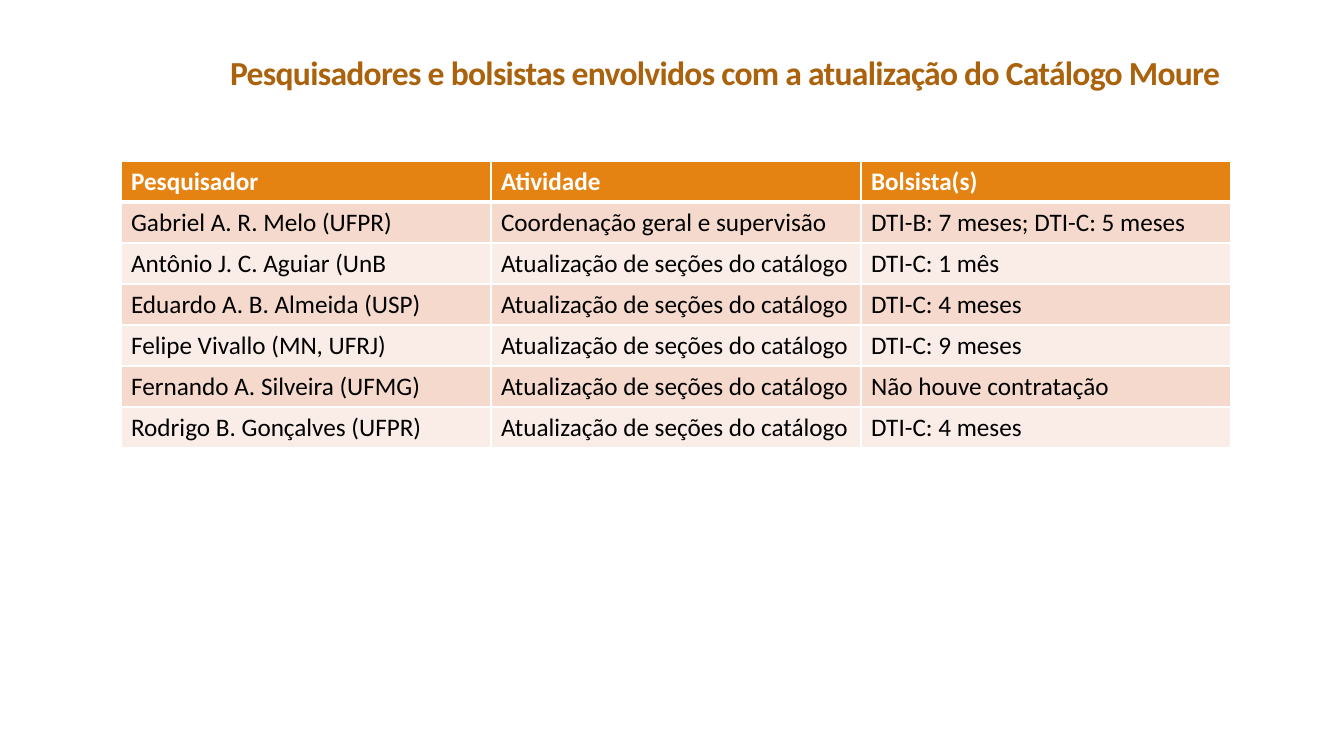
from dataclasses import dataclass

import pptx
import pptx.dml.color
import pptx.enum.text
import pptx.oxml
import pptx.oxml.ns
import pptx.util

TITLE = "Pesquisadores e bolsistas envolvidos com a atualização do Catálogo Moure"
HEADER = ("Pesquisador", "Atividade", "Bolsista(s)")
UPDATE = "Atualização de seções do catálogo"
RESEARCHERS = [
    ("Gabriel A. R. Melo (UFPR)", "Coordenação geral e supervisão", "DTI-B: 7 meses; DTI-C: 5 meses"),
    ("Antônio J. C. Aguiar (UnB", UPDATE, "DTI-C: 1 mês"),
    ("Eduardo A. B. Almeida (USP)", UPDATE, "DTI-C: 4 meses"),
    ("Felipe Vivallo (MN, UFRJ)", UPDATE, "DTI-C: 9 meses"),
    ("Fernando A. Silveira (UFMG)", UPDATE, "Não houve contratação"),
    ("Rodrigo B. Gonçalves (UFPR)", UPDATE, "DTI-C: 4 meses"),
]


@dataclass(frozen=True)
class Theme:
    font: str = "Calibri"
    title: str = "AB620D"
    header: str = "E48312"
    bands: tuple = ("F5D9CC", "FAEDE7")
    white: str = "FFFFFF"
    black: str = "000000"
    title_size: int = 24
    body_size: int = 18


THEME = Theme()
PX_PER_INCH = 100.8
SLIDE = (1344, 756)
TITLE_BOX = (18, 31, 1212, 66)
TABLE_LEFT, TABLE_TOP = 121, 161
COL_WIDTH, ROW_HEIGHT = 370, 41


def px(n):
    return pptx.util.Emu(round(n * 914400 / PX_PER_INCH))


def rgb(color):
    return pptx.dml.color.RGBColor.from_string(color)


def write(tf, text, *, size, color, bold=False, align=None, line_spacing=None, tracking=None):
    p = tf.paragraphs[0]
    if align is not None:
        p.alignment = align
    if line_spacing is not None:
        p.line_spacing = line_spacing
    r = p.add_run()
    r.text = text
    r.font.name = THEME.font
    r.font.size = pptx.util.Pt(size)
    r.font.bold = bold
    r.font.color.rgb = rgb(color)
    if tracking is not None:
        r.font._element.set("spc", str(round(tracking * 100)))


def set_borders(cell, color, **widths):
    """Draw cell edges; widths maps L, R, T and B to points."""
    tc_pr = cell._tc.get_or_add_tcPr()
    for side in "LRTB":
        tc_pr.append(pptx.oxml.parse_xml(
            f'<a:ln{side} {pptx.oxml.ns.nsdecls("a")} w="{pptx.util.Pt(widths[side])}">'
            f'<a:solidFill><a:srgbClr val="{color}"/></a:solidFill></a:ln{side}>'))


def add_title(s):
    sp = s.shapes.title
    sp.left, sp.top, sp.width, sp.height = map(px, TITLE_BOX)
    tf = sp.text_frame
    tf.word_wrap = True
    tf.auto_size = pptx.enum.text.MSO_AUTO_SIZE.NONE
    tf.vertical_anchor = pptx.enum.text.MSO_ANCHOR.BOTTOM
    write(tf, TITLE, size=THEME.title_size, color=THEME.title, bold=True,
          align=pptx.enum.text.PP_ALIGN.RIGHT, line_spacing=0.85, tracking=-0.5)


def add_researcher_table(s):
    rows = [HEADER, *RESEARCHERS]
    table = s.shapes.add_table(
        len(rows), len(HEADER), px(TABLE_LEFT), px(TABLE_TOP),
        px(COL_WIDTH * len(HEADER)), px(ROW_HEIGHT * len(rows))).table
    for column in table.columns:
        column.width = px(COL_WIDTH)
    for i, values in enumerate(rows):
        table.rows[i].height = px(ROW_HEIGHT)
        is_header = i == 0
        fill = THEME.header if is_header else THEME.bands[(i - 1) % 2]
        for j, text in enumerate(values):
            cell = table.cell(i, j)
            set_borders(cell, THEME.white, L=1, R=1,
                        T=3 if i == 1 else 1, B=3 if is_header else 1)
            cell.fill.solid()
            cell.fill.fore_color.rgb = rgb(fill)
            write(cell.text_frame, text, size=THEME.body_size, bold=is_header,
                  color=THEME.white if is_header else THEME.black)


def main():
    prs = pptx.Presentation()
    prs.slide_width, prs.slide_height = map(px, SLIDE)
    s = prs.slides.add_slide(prs.slide_layouts[5])
    add_title(s)
    add_researcher_table(s)
    prs.save("out.pptx")


if __name__ == "__main__":
    main()
